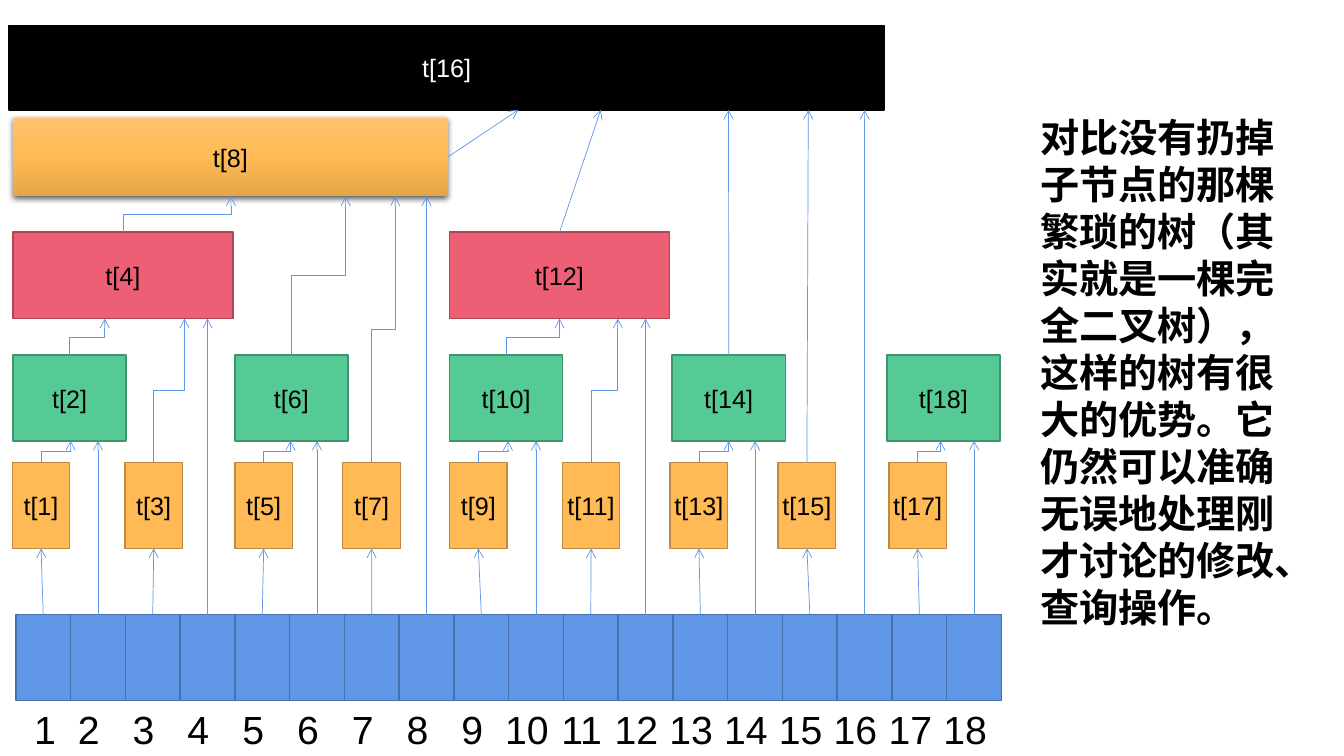
from lxml import etree
from pptx import Presentation
from pptx.dml.color import RGBColor
from pptx.enum.lang import MSO_LANGUAGE_ID
from pptx.enum.shapes import MSO_CONNECTOR, MSO_SHAPE
from pptx.enum.text import MSO_ANCHOR, PP_ALIGN
from pptx.oxml import parse_xml
from pptx.oxml.ns import nsdecls, qn
from pptx.util import Cm, Pt

RECT = MSO_SHAPE.RECTANGLE
STRAIGHT, ELBOW = MSO_CONNECTOR.STRAIGHT, MSO_CONNECTOR.ELBOW
CENTER, MIDDLE = PP_ALIGN.CENTER, MSO_ANCHOR.MIDDLE
CHINESE = MSO_LANGUAGE_ID.SIMPLIFIED_CHINESE
TOP, BOTTOM, RIGHT = 0, 2, 3

BLACK = RGBColor(0x00, 0x00, 0x00)
WHITE = RGBColor(0xFF, 0xFF, 0xFF)
BLUE = RGBColor(0x60, 0x96, 0xE6)
DARK_BLUE = RGBColor(0x47, 0x6F, 0xAA)
ORANGE = RGBColor(0xFF, 0xBA, 0x55)
DARK_ORANGE = RGBColor(0xBD, 0x8A, 0x3F)
GREEN = RGBColor(0x56, 0xCA, 0x95)
DARK_GREEN = RGBColor(0x40, 0x95, 0x6E)
RED = RGBColor(0xEC, 0x5F, 0x74)
DARK_RED = RGBColor(0xAF, 0x46, 0x56)

FONT = "Arial"
NOTE = ("对比没有扔掉子节点的那棵繁琐的树（其实就是一棵完全二叉树），"
        "这样的树有很大的优势。它仍然可以准确无误地处理刚才讨论的修改、查询操作。")

# Lengths are in centimetres.
CELLS = 18
CELL_LEFT, CELL_TOP, CELL_W, CELL_H = 0.4, 15.49, 1.38, 2.16
NUMBERS_LEFT, NUMBERS_TOP = 0.86, 17.65

# lowbit: (top, width, height, fill, line)
LEVELS = {
    1: (11.66, 1.45, 2.16, ORANGE, DARK_ORANGE),
    2: (8.95, 2.85, 2.16, GREEN, DARK_GREEN),
    4: (5.85, 5.54, 2.18, RED, DARK_RED),
    8: (2.97, 10.95, 1.98, None, None),
    16: (0.64, 22.05, 2.13, BLACK, BLACK),
}
NODE_LEFT = {
    1: 0.31, 2: 0.33, 3: 3.15, 4: 0.33, 5: 5.92, 6: 5.92, 7: 8.64, 8: 0.33,
    9: 11.33, 10: 11.33, 11: 14.17, 12: 11.33, 13: 16.89, 14: 16.94,
    15: 19.61, 16: 0.23, 17: 22.4, 18: 22.35,
}
# (child, parent, x of the arrow tip)
ELBOW_LINKS = [
    (1, 2, 1.78), (5, 6, 7.32), (9, 10, 12.8), (13, 14, 18.36), (17, 18, 23.7),
    (2, 4, 2.64), (3, 4, 4.65), (10, 12, 14.1), (11, 12, 15.57),
    (4, 8, 5.82), (6, 8, 8.71), (7, 8, 9.96),
]
# (child, parent, x of the arrow tip, side of the child)
STRAIGHT_LINKS = [
    (8, 16, 13.06, RIGHT), (12, 16, 15.14, TOP),
    (14, 16, 18.36, TOP), (15, 16, 20.37, TOP),
]

GRADIENT = (
    f'<a:gradFill {nsdecls("a")} rotWithShape="1"><a:gsLst>'
    '<a:gs pos="0"><a:srgbClr val="FFC270"/></a:gs>'
    '<a:gs pos="50000"><a:srgbClr val="FFBA55"/></a:gs>'
    '<a:gs pos="100000"><a:srgbClr val="E5A649"/></a:gs>'
    '</a:gsLst><a:lin ang="5400000" scaled="0"/></a:gradFill>')
SHADOW = (
    f'<a:outerShdw {nsdecls("a")} blurRad="57150" dist="19050" dir="5400000" '
    'algn="ctr" rotWithShape="0"><a:srgbClr val="000000">'
    '<a:alpha val="63000"/></a:srgbClr></a:outerShdw>')

prs = Presentation()
prs.slide_width, prs.slide_height = Cm(33.87), Cm(19.05)
slide = prs.slides.add_slide(prs.slide_layouts[6])
shapes = slide.shapes


def add_box(left, top, width, height, fill, line):
    """Rectangle; without a fill colour it gets the gradient and shadow."""
    sp = shapes.add_shape(RECT, Cm(left), Cm(top), Cm(width), Cm(height))
    sp.shadow.inherit = False
    if fill is None:
        sp.fill.gradient()
        sp.line.fill.background()
        spPr = sp._element.spPr
        spPr.replace(spPr.find(qn("a:gradFill")), parse_xml(GRADIENT))
        spPr.find(qn("a:effectLst")).append(parse_xml(SHADOW))
    else:
        sp.fill.solid()
        sp.fill.fore_color.rgb = fill
        sp.line.color.rgb = line
        sp.line.width = Pt(1)
    return sp


def write(sp, text, size, color, wrap):
    tf = sp.text_frame
    tf.word_wrap = wrap
    p = tf.paragraphs[0]
    p.text = text
    p.font.name, p.font.size, p.font.color.rgb = FONT, Pt(size), color
    return p


def add_arrow(kind, x1, y1, x2, y2):
    c = shapes.add_connector(kind, x1, y1, x2, y2)
    c.line.color.rgb = BLUE
    c.line.width = Pt(0.5)
    etree.SubElement(c.line._get_or_add_ln(), qn("a:tailEnd"), type="arrow")
    etree.SubElement(c._element.spPr, qn("a:effectLst"))
    return c


def add_rising_elbow(x1, y1, x2, y2):
    """Elbow that leaves upwards: its frame lies on its side, turned by 270°."""
    rise, run = y1 - y2, x2 - x1
    left, top = (x1 + x2 - rise) // 2, (y1 + y2 - run) // 2
    c = add_arrow(ELBOW, left, top, left + rise, top + run)
    c._element.spPr.find(qn("a:xfrm")).set("rot", str(270 * 60000))


def center_x(sp):
    return sp.left + sp.width // 2


def bottom(sp):
    return sp.top + sp.height


cells = {i: add_box(CELL_LEFT + (i - 1) * CELL_W, CELL_TOP, CELL_W, CELL_H,
                    BLUE, DARK_BLUE) for i in range(1, CELLS + 1)}

nodes = {}
for i, left in NODE_LEFT.items():
    top, width, height, fill, line = LEVELS[i & -i]
    sp = nodes[i] = add_box(left, top, width, height, fill, line)
    p = write(sp, f"t[{i}]", 18, WHITE if fill == BLACK else BLACK, False)
    p.alignment = CENTER
    tf = sp.text_frame
    tf.vertical_anchor = MIDDLE
    tf.margin_left = tf.margin_right = 0

for i, cell in cells.items():
    node, x = nodes[i], center_x(cell)
    c = add_arrow(STRAIGHT, x, cell.top, x, bottom(node))
    c.begin_connect(cell, TOP)
    if i % 2:
        c.end_connect(node, BOTTOM)

for child, parent, x in ELBOW_LINKS:
    sp = nodes[child]
    add_rising_elbow(center_x(sp), sp.top, Cm(x), bottom(nodes[parent]))

for child, parent, x, side in STRAIGHT_LINKS:
    sp = nodes[child]
    c = add_arrow(STRAIGHT, center_x(sp), sp.top, Cm(x), bottom(nodes[parent]))
    c.begin_connect(sp, side)

numbers = shapes.add_textbox(Cm(NUMBERS_LEFT), Cm(NUMBERS_TOP), Cm(24.61), Cm(1.45))
numbers.text_frame.margin_left = numbers.text_frame.margin_right = 0
p = write(numbers, "\t".join(str(i) for i in cells), 28, BLACK, True)
tabs = etree.Element(qn("a:tabLst"))
for i in range(1, CELLS):
    etree.SubElement(tabs, qn("a:tab"), pos=str(Cm(i * CELL_W)), algn="ctr")
p._p.get_or_add_pPr().insert(0, tabs)

note = shapes.add_textbox(Cm(25.96), Cm(2.72), Cm(7.01), Cm(13.41))
p = write(note, NOTE, 28, BLACK, True)
p.font.bold = True
p.font.language_id = CHINESE

prs.save("out.pptx")
